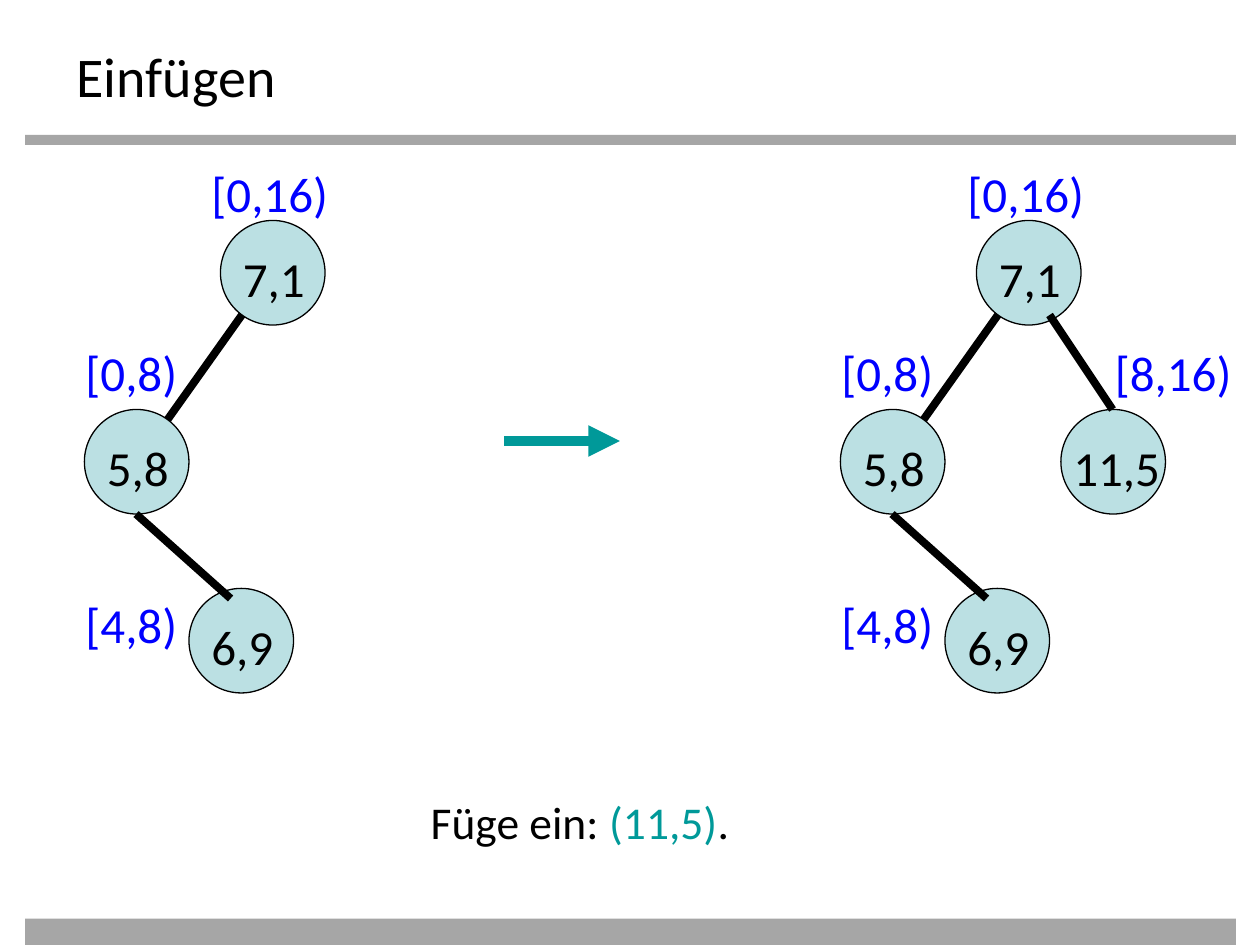
from dataclasses import dataclass

from lxml import etree
from pptx import Presentation
from pptx.dml.color import RGBColor
from pptx.enum.shapes import MSO_CONNECTOR, MSO_SHAPE
from pptx.oxml.ns import qn
from pptx.util import Inches, Pt

RECT, OVAL, STRAIGHT = MSO_SHAPE.RECTANGLE, MSO_SHAPE.OVAL, MSO_CONNECTOR.STRAIGHT


@dataclass(frozen=True)
class Theme:
    font: str = "Calibri"
    black: RGBColor = RGBColor(0, 0, 0)
    grey: RGBColor = RGBColor(0xA6, 0xA6, 0xA6)
    white: RGBColor = RGBColor(0xFF, 0xFF, 0xFF)
    node: RGBColor = RGBColor(0xBB, 0xE0, 0xE3)
    interval: RGBColor = RGBColor(0, 0, 0xFF)
    accent: RGBColor = RGBColor(0, 0x99, 0x99)
    title: Pt = Pt(32)
    body: Pt = Pt(26)
    label: Pt = Pt(28)


T = Theme()


def add_text(shapes, box, runs, size):
    tb = shapes.add_textbox(*map(Inches, box))
    tf = tb.text_frame
    tf.word_wrap = True
    p = tf.paragraphs[0]
    p.font.name, p.font.size = T.font, size
    for text, color in runs:
        r = p.add_run()
        r.text = text
        r.font.color.rgb = color
    return tb


def add_line(shapes, points, color, width):
    line = shapes.add_connector(STRAIGHT, *map(Inches, points))
    line.line.color.rgb = color
    line.line.width = Pt(width)
    etree.SubElement(line._element.spPr, qn("a:effectLst"))
    return line


prs = Presentation()
prs.slide_width, prs.slide_height = Inches(10), Inches(7.5)
s = prs.slides.add_slide(prs.slide_layouts[6])

for top, height in [(1.07, 0.08), (7.29, 0.21)]:
    bar = s.shapes.add_shape(RECT, Inches(0.2), Inches(top), Inches(9.61), Inches(height))
    bar.shadow.inherit = False
    bar.fill.solid()
    bar.fill.fore_color.rgb = T.grey
    bar.line.fill.background()

add_text(s.shapes, (0.51, 0.28, 9, 0.55), [("Einfügen", T.black)], T.title)
task = add_text(s.shapes, (3.32, 6.25, 3.25, 0.67),
                [("Füge ein: ", T.black), ("(11,5)", T.accent), (".", T.black)], T.body)
task.fill.solid()
task.fill.fore_color.rgb = T.white

nodes = [
    ("7,1", 1.75, 1.75, "[0,16)", 1.58, 1.25),
    ("5,8", 0.67, 3.25, "[0,8)", 0.58, 2.67),
    ("6,9", 1.5, 4.67, "[4,8)", 0.58, 4.67),
]
edges = [(1.92, 2.5, 1.33, 3.33), (1.08, 4.08, 1.83, 4.75)]
new_node = ("11,5", 2.42, 3.25, "[8,16)", 2.75, 2.67)
new_edge = (2.33, 2.5, 2.83, 3.25)

trees = [(0, nodes, edges), (6, nodes + [new_node], edges + [new_edge])]
for dx, tree_nodes, tree_edges in trees:
    shapes = s.shapes.add_group_shape().shapes
    for key, x, y, interval, label_x, label_y in tree_nodes:
        circle = shapes.add_shape(OVAL, Inches(x + dx), Inches(y), Inches(0.83), Inches(0.83))
        circle.shadow.inherit = False
        circle.fill.solid()
        circle.fill.fore_color.rgb = T.node
        circle.line.color.rgb = T.black
        circle.line.width = Pt(0.75)
        inset, width = (0, 1) if len(key) > 3 else (0.08, 0.75)
        add_text(shapes, (x + dx + inset, y + 0.17, width, 0.57), [(key, T.black)], T.label)
        add_text(shapes, (label_x + dx, label_y, 1.25, 0.57), [(interval, T.interval)], T.label)
    for x1, y1, x2, y2 in tree_edges:
        add_line(shapes, (x1 + dx, y1, x2 + dx, y2), T.black, 4.5)

arrow = add_line(s.shapes, (4, 3.5, 4.92, 3.5), T.accent, 6)
etree.SubElement(arrow.line._get_or_add_ln(), qn("a:tailEnd"), type="triangle")

prs.save("out.pptx")
